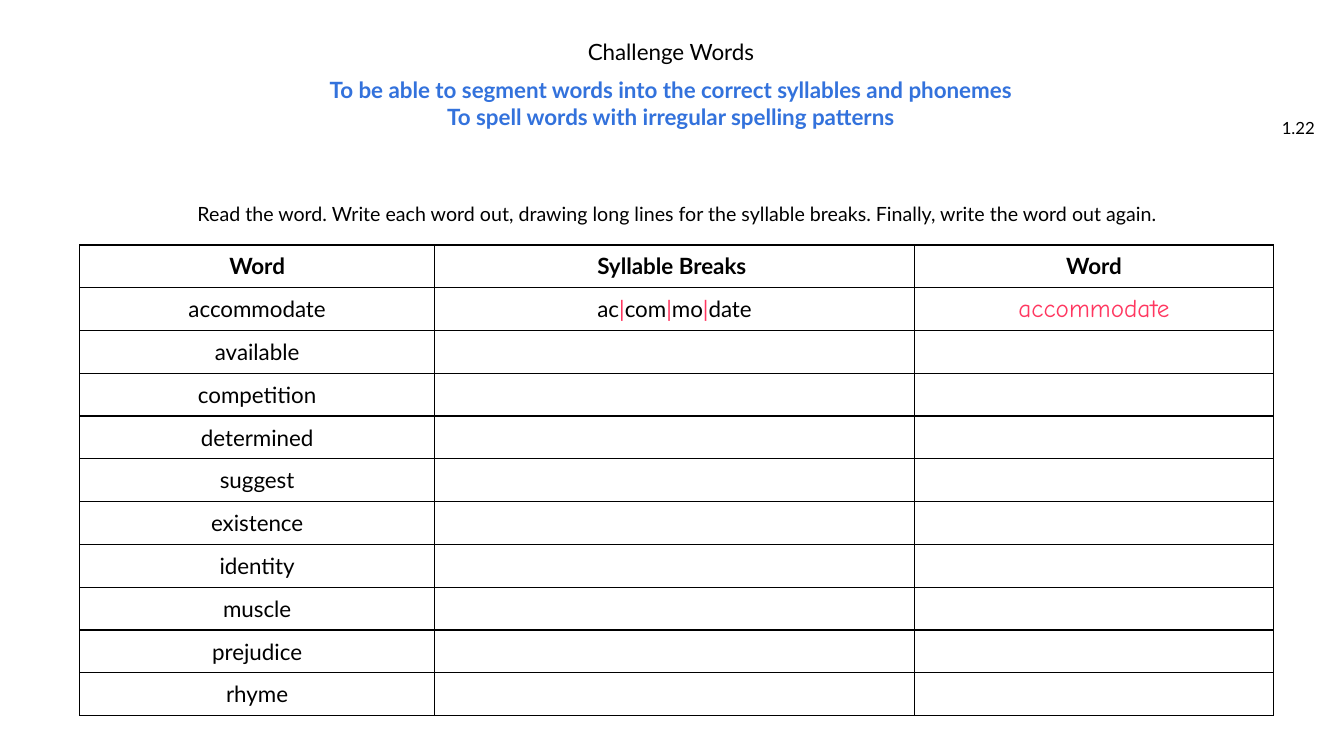
"""Build a spelling worksheet slide with a syllable-break table."""
from pptx import Presentation, util as u
from pptx.dml.color import RGBColor
from pptx.enum import text
from pptx.oxml import parse_xml
from pptx.oxml.ns import nsdecls

BLACK = RGBColor(0x00, 0x00, 0x00)
BLUE = RGBColor(0x33, 0x72, 0xDC)
PINK = RGBColor(0xFF, 0x37, 0x60)
WIDTH, HEIGHT = u.Inches(13.33), u.Inches(7.5)

BODY = {"name": "Lato", "size": u.Pt(16), "bold": False, "color": BLACK}
HEADING = {**BODY, "bold": True}
GOAL = {**HEADING, "color": BLUE}
INSTRUCTION = {**BODY, "size": u.Pt(14)}
NUMBER = {**BODY, "size": u.Pt(12)}
BREAK = {**BODY, "color": PINK}
HANDWRITING = {**BREAK, "name": "Comic Neue", "size": u.Pt(18)}

COLUMN_SHARES = (26.41, 35.71, 26.71)
HEADINGS = ("Word", "Syllable Breaks ", "Word")
WORDS = ("accommodate", "available", "competition", "determined", "suggest",
         "existence", "identity", "muscle", "prejudice", "rhyme")
SYLLABLES = ("ac", "com", "mo", "date")


def across(share):
    """Turn a percentage of the slide's width into a length."""
    return round(WIDTH * share / 100)


def down(share):
    """Turn a percentage of the slide's height into a length."""
    return round(HEIGHT * share / 100)


def area(left, top, width, height):
    """Turn four percentages into a position and a size."""
    return across(left), down(top), across(width), down(height)


def write(paragraph, pieces, align=text.PP_ALIGN.CENTER):
    """Fill a paragraph with formatted pieces of wording."""
    paragraph.alignment = align
    for wording, style in pieces:
        run = paragraph.add_run()
        run.text = wording
        for attribute, value in style.items():
            if attribute == "color":
                run.font.color.rgb = value
            else:
                setattr(run.font, attribute, value)


def set_frame(frame, **changes):
    """Give a text frame wrapping, a fixed size and middle anchoring."""
    settings = {"word_wrap": True, "auto_size": text.MSO_AUTO_SIZE.NONE,
                "vertical_anchor": text.MSO_ANCHOR.MIDDLE, **changes}
    for attribute, value in settings.items():
        setattr(frame, attribute, value)


def add_title(slide, wording, place):
    """Move the title placeholder and fill it."""
    title = slide.shapes.title
    for attribute, value in zip(("left", "top", "width", "height"), place):
        setattr(title, attribute, value)
    set_frame(title.text_frame)
    write(title.text_frame.paragraphs[0], [(wording, BODY)])


def add_lines(slide, lines, style, place, align=text.PP_ALIGN.CENTER, **changes):
    """Add a text box with one paragraph for each line."""
    frame = slide.shapes.add_textbox(*place).text_frame
    set_frame(frame, **changes)
    for index, line in enumerate(lines):
        paragraph = frame.add_paragraph() if index else frame.paragraphs[0]
        write(paragraph, [(line, style)], align)


def outline(cell):
    """Draw a thin black border on every side of a cell."""
    properties = cell._tc.get_or_add_tcPr()
    for position, side in enumerate(("lnL", "lnR", "lnT", "lnB")):
        properties.insert(position, parse_xml(
            f'<a:{side} {nsdecls("a")} w="{u.Pt(1)}"><a:solidFill>'
            f'<a:srgbClr val="{BLACK}"/></a:solidFill></a:{side}>'))


def worksheet_rows():
    """List the pieces of wording for each cell, row by row."""
    split_word = [(SYLLABLES[0], BODY)]
    for syllable in SYLLABLES[1:]:
        split_word += [("|", BREAK), (syllable, BODY)]
    rows = [[[(heading, HEADING)] for heading in HEADINGS]]
    rows += [[[(word, BODY)], [], []] for word in WORDS]
    rows[1][1:] = [split_word, [(WORDS[0], HANDWRITING)]]
    return rows


def add_worksheet(slide, rows, place):
    """Add the bordered table of words."""
    table = slide.shapes.add_table(len(rows), len(COLUMN_SHARES), *place).table
    table.first_row = table.horz_banding = False
    for column, share in zip(table.columns, COLUMN_SHARES):
        column.width = across(share)
    for row_index, row in enumerate(rows):
        for column_index, pieces in enumerate(row):
            cell = table.cell(row_index, column_index)
            cell.fill.background()
            cell.vertical_anchor = text.MSO_ANCHOR.MIDDLE
            write(cell.text_frame.paragraphs[0], pieces)
            outline(cell)


def main():
    """Build and save the slide."""
    deck = Presentation()
    deck.slide_width, deck.slide_height = WIDTH, HEIGHT
    slide = deck.slides.add_slide(deck.slide_layouts.get_by_name("Title Only"))
    add_title(slide, "Challenge Words", area(28.58, 4.53, 42.69, 4.67))
    add_lines(slide, ("To be able to segment words into the correct syllables and phonemes",
                      "To spell words with irregular spelling patterns"),
              GOAL, area(16.95, 9.73, 65.94, 10.93),
              vertical_anchor=text.MSO_ANCHOR.TOP, margin_top=u.Inches(0.03))
    add_lines(slide, ("1.22",), NUMBER, area(93.85, 14.27, 4.73, 5.33),
              text.PP_ALIGN.RIGHT)
    add_lines(slide, ("Read the word. Write each word out, drawing long lines for the "
                      "syllable breaks. Finally, write the word out again.",),
              INSTRUCTION, area(4.2, 25.6, 92.42, 5.33))
    add_worksheet(slide, worksheet_rows(), area(5.93, 32.4, 88.83, 62.27))
    deck.save("out.pptx")


if __name__ == "__main__":
    main()
